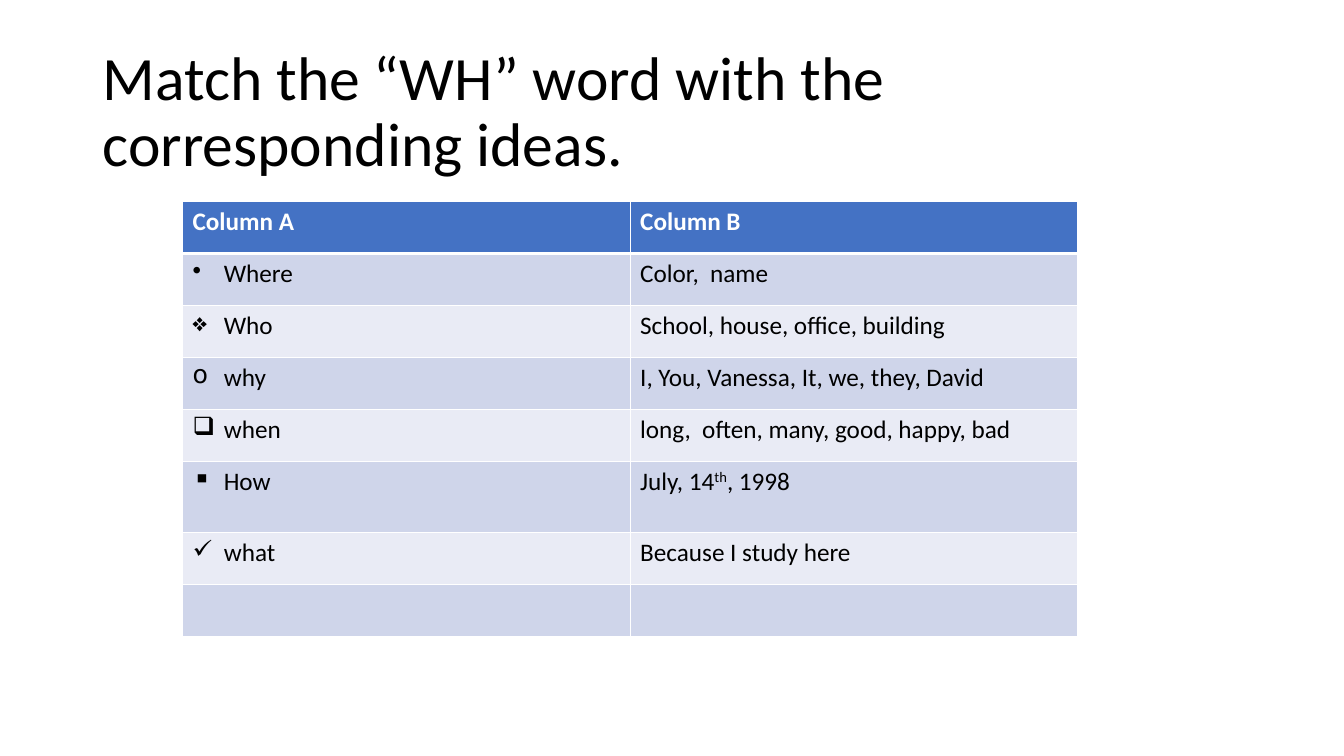
from dataclasses import dataclass

from lxml.etree import SubElement
from pptx import Presentation
from pptx.dml.color import RGBColor
from pptx.enum.text import MSO_ANCHOR
from pptx.oxml import parse_xml
from pptx.oxml.ns import nsdecls, qn
from pptx.util import Inches, Pt

# Page, palette and type
PAGE_WIDTH, PAGE_HEIGHT = Inches(13.33), Inches(7.5)
FONT = "Calibri"
BLACK = RGBColor(0x00, 0x00, 0x00)
WHITE = RGBColor(0xFF, 0xFF, 0xFF)
HEADER_BLUE = RGBColor(0x44, 0x72, 0xC4)
BANDS = (RGBColor(0xCF, 0xD5, 0xEA), RGBColor(0xE9, 0xEB, 0xF5))

# Table grid
TABLE_LEFT, TABLE_TOP = Inches(1.81), Inches(2)
COLUMN_WIDTH, ROW_HEIGHT = Inches(4.44), Inches(0.515)
BULLET_INDENT = Inches(0.31)
THIN, THICK = Pt(1), Pt(3)


@dataclass(frozen=True)
class Match:
    bullet: str = ""
    word: str = ""
    idea: tuple[str, ...] = ()  # every second part is superscript
    height: int = ROW_HEIGHT


MATCHES = (
    Match("•", "Where", ("Color,  name",)),
    Match("❖", "Who", ("School, house, office, building",)),
    Match("o", "why", ("I, You, Vanessa, It, we, they, David",)),
    Match("❑", "when", ("long,  often, many, good, happy, bad",)),
    Match("▪", "How", ("July, 14", "th", ", 1998"), Inches(0.71)),
    Match("✓", "what", ("Because I study here",)),
    Match(),
)


def add_span(para, text: str, size: int, color: RGBColor, bold: bool = False):
    span = para.add_run()
    span.text = text
    font = span.font
    font.name, font.size, font.bold = FONT, Pt(size), bold
    font.color.rgb = color
    return span


def add_bullet(para, symbol: str) -> None:
    properties = para._p.get_or_add_pPr()
    properties.set("marL", str(BULLET_INDENT))
    properties.set("indent", str(-BULLET_INDENT))
    SubElement(properties, qn("a:buChar")).set("char", symbol)


def style_cell(cell, fill: RGBColor, top: int = THIN, bottom: int = THIN) -> None:
    cell.fill.solid()
    cell.fill.fore_color.rgb = fill
    properties = cell._tc.get_or_add_tcPr()
    sides = {"L": THIN, "R": THIN, "T": top, "B": bottom}
    for place, (side, width) in enumerate(sides.items()):
        properties.insert(place, parse_xml(
            f'<a:ln{side} {nsdecls("a")} w="{width}"><a:solidFill>'
            f'<a:srgbClr val="{WHITE}"/></a:solidFill></a:ln{side}>'))


def add_title(page, text: str) -> None:
    box = page.shapes.add_textbox(Inches(0.92), Inches(0.4), Inches(11.5), Inches(1.45))
    frame = box.text_frame
    frame.word_wrap = True
    frame.vertical_anchor = MSO_ANCHOR.MIDDLE
    para = frame.paragraphs[0]
    para.line_spacing = 0.9
    add_span(para, text, 44, BLACK)


def add_match_table(page, headings: tuple[str, str], matches: tuple[Match, ...]) -> None:
    height = ROW_HEIGHT + sum(match.height for match in matches)
    table = page.shapes.add_table(len(matches) + 1, len(headings), TABLE_LEFT, TABLE_TOP,
                                  COLUMN_WIDTH * len(headings), height).table
    for column in table.columns:
        column.width = COLUMN_WIDTH

    # Header row
    table.rows[0].height = ROW_HEIGHT
    for column, heading in enumerate(headings):
        cell = table.cell(0, column)
        style_cell(cell, HEADER_BLUE, bottom=THICK)
        add_span(cell.text_frame.paragraphs[0], heading, 18, WHITE, bold=True)

    # Banded rows: question word on the left, idea on the right
    for row, match in enumerate(matches, start=1):
        table.rows[row].height = match.height
        cells = table.cell(row, 0), table.cell(row, 1)
        for cell in cells:
            style_cell(cell, BANDS[(row - 1) % 2], top=THICK if row == 1 else THIN)
        word_para, idea_para = (cell.text_frame.paragraphs[0] for cell in cells)
        if match.word:
            add_bullet(word_para, match.bullet)
            add_span(word_para, match.word, 18, BLACK)
        for part, text in enumerate(match.idea):
            span = add_span(idea_para, text, 18, BLACK)
            if part % 2:
                span._r.get_or_add_rPr().set("baseline", "30000")


def main() -> None:
    deck = Presentation()
    deck.slide_width, deck.slide_height = PAGE_WIDTH, PAGE_HEIGHT
    page = deck.slides.add_slide(deck.slide_layouts[6])
    add_title(page, "Match the “WH” word with the corresponding ideas.")
    add_match_table(page, ("Column A", "Column B"), MATCHES)
    deck.save("out.pptx")


if __name__ == "__main__":
    main()
